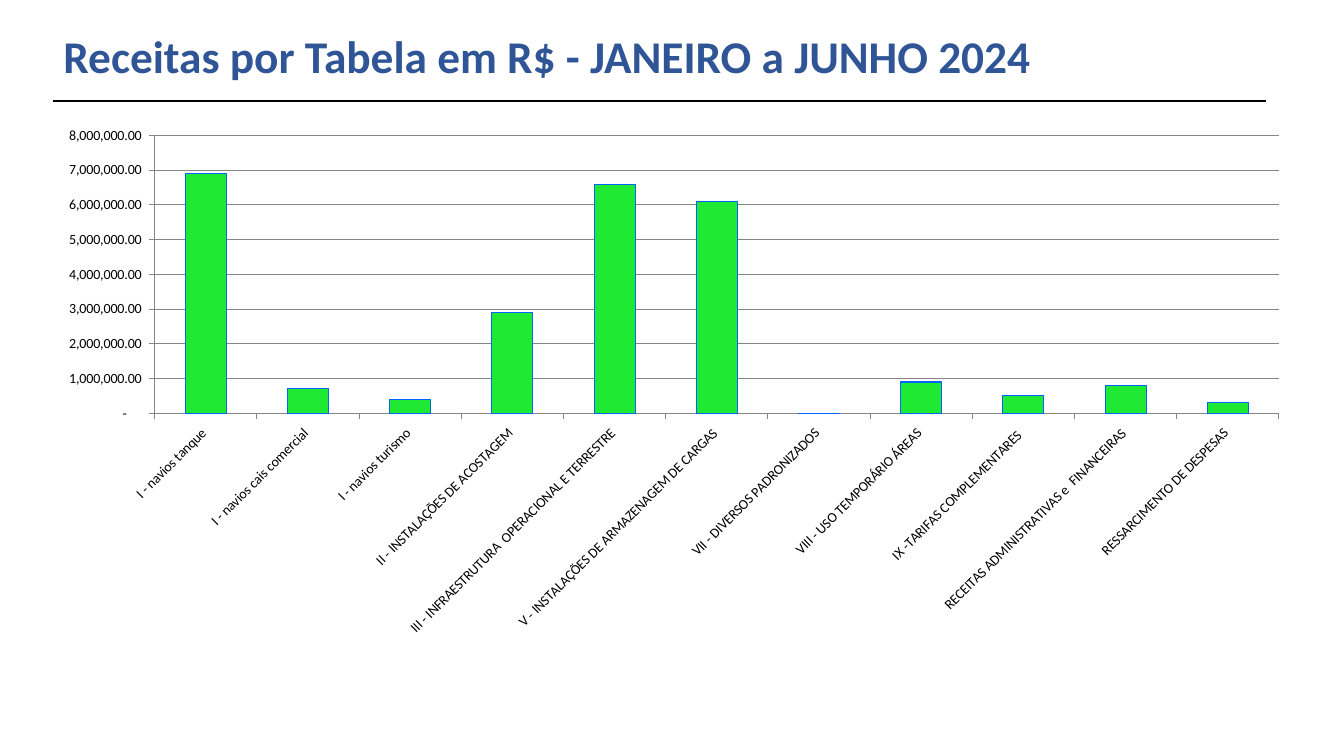
import pptx
import pptx.chart.data
import pptx.dml.color
import pptx.enum.chart
import pptx.enum.shapes
import pptx.enum.text
import pptx.oxml
import pptx.oxml.ns
import pptx.util
from pptx.util import Inches

COLORS = {
    "title": "2F5597",
    "text": "000000",
    "rule": "000000",
    "axis": "868686",
    "bar": "1FE932",
    "bar_edge": "0066FF",
}

REVENUES = {
    " I - navios tanque ": 6900000,
    " I - navios cais comercial ": 700000,
    " I - navios turismo ": 400000,
    " II - INSTALAÇÕES DE ACOSTAGEM ": 2900000,
    " III - INFRAESTRUTURA  OPERACIONAL E TERRESTRE ": 6600000,
    " V - INSTALAÇÕES DE ARMAZENAGEM DE CARGAS ": 6100000,
    " VII - DIVERSOS PADRONIZADOS ": 0,
    " VIII - USO TEMPORÁRIO ÁREAS ": 900000,
    " IX -TARIFAS COMPLEMENTARES  ": 500000,
    " RECEITAS ADMINISTRATIVAS e  FINANCEIRAS ": 800000,
    " RESSARCIMENTO DE DESPESAS ": 300000,
}
NUMBER_FORMAT = '_(* #,##0.00_);_(* \\(#,##0.00\\);_(* "-"??_);_(@_)'
PLOT_AREA = {"x": 0.0905, "y": 0.035, "w": 0.89, "h": 0.522}


class SlideBuilder:
    """Holds the style and the current slide."""

    font_name = "Calibri"

    def __init__(self, slide):
        self.slide = slide

    def color(self, name):
        return pptx.dml.color.RGBColor.from_string(COLORS[name])

    def style_line(self, line, color, width):
        line.color.rgb = self.color(color)
        line.width = pptx.util.Pt(width)

    def style_font(self, font, size, color, bold=False):
        font.name = self.font_name
        font.size = pptx.util.Pt(size)
        font.bold = bold
        font.color.rgb = self.color(color)

    def title(self, text, left, top, width, height):
        shape = self.slide.shapes.add_textbox(
            Inches(left), Inches(top), Inches(width), Inches(height))
        frame = shape.text_frame
        frame.word_wrap = True
        frame.vertical_anchor = pptx.enum.text.MSO_ANCHOR.TOP
        frame.text = text
        paragraph = frame.paragraphs[0]
        paragraph.line_spacing = 0.9
        self.style_font(paragraph.runs[0].font, 32.4, "title", bold=True)

    def rule(self, left, right, y):
        connector = self.slide.shapes.add_connector(
            pptx.enum.shapes.MSO_CONNECTOR.STRAIGHT,
            Inches(left), Inches(y), Inches(right), Inches(y))
        self.style_line(connector.line, "rule", 1.5)
        properties = connector._element.spPr
        properties.append(pptx.oxml.parse_xml(
            f"<a:effectLst {pptx.oxml.ns.nsdecls('a')}/>"))

    def column_chart(self, values, left, top, width, height):
        data = pptx.chart.data.CategoryChartData(number_format=NUMBER_FORMAT)
        data.categories = list(values)
        data.add_series("Series 1", list(values.values()))
        chart = self.slide.shapes.add_chart(
            pptx.enum.chart.XL_CHART_TYPE.COLUMN_CLUSTERED,
            Inches(left), Inches(top), Inches(width), Inches(height), data).chart
        chart.has_legend = False
        chart.has_title = False
        self.style_font(chart.font, 10, "text")

        plot = chart.plots[0]
        plot.gap_width = 150
        plot.vary_by_categories = False
        series = plot.series[0]
        series.format.fill.solid()
        series.format.fill.fore_color.rgb = self.color("bar")
        self.style_line(series.format.line, "bar_edge", 0.75)

        for axis in (chart.category_axis, chart.value_axis):
            axis.major_tick_mark = pptx.enum.chart.XL_TICK_MARK.OUTSIDE
            self.style_line(axis.format.line, "axis", 0.75)
            self.style_font(axis.tick_labels.font, 10, "text")
        self.slant_labels(chart.category_axis)

        value_axis = chart.value_axis
        value_axis.minimum_scale = 0
        value_axis.maximum_scale = 8000000
        value_axis.major_unit = 1000000
        value_axis.has_major_gridlines = True
        self.style_line(value_axis.major_gridlines.format.line, "axis", 0.75)
        value_axis.tick_labels.number_format = NUMBER_FORMAT
        value_axis.tick_labels.number_format_is_linked = False
        self.place_plot_area(chart)

    def slant_labels(self, axis):
        body = axis._element.find(".//" + pptx.oxml.ns.qn("a:bodyPr"))
        body.set("rot", str(-45 * 60000))
        body.set("vert", "horz")

    def place_plot_area(self, chart):
        """Fix the inner plot area as fractions of the chart."""
        modes = "".join(f'<c:{key}Mode val="edge"/>' for key in "xy")
        sizes = "".join(f'<c:{key} val="{value}"/>' for key, value in PLOT_AREA.items())
        layout = pptx.oxml.parse_xml(
            f"<c:layout {pptx.oxml.ns.nsdecls('c')}><c:manualLayout>"
            f'<c:layoutTarget val="inner"/>{modes}{sizes}'
            "</c:manualLayout></c:layout>")
        plot_area = chart._chartSpace.chart.plotArea
        for default_layout in plot_area.findall(pptx.oxml.ns.qn("c:layout")):
            plot_area.remove(default_layout)
        plot_area.insert(0, layout)


def main():
    presentation = pptx.Presentation()
    presentation.slide_width = Inches(13.33)
    presentation.slide_height = Inches(7.5)
    slide = presentation.slides.add_slide(presentation.slide_layouts[6])
    builder = SlideBuilder(slide)
    builder.rule(0.53, 12.56, 1)
    builder.title("Receitas por Tabela em R$ - JANEIRO a JUNHO 2024",
                  0.53, 0.29, 10.21, 0.7)
    builder.column_chart(REVENUES, 0.4, 1.16, 12.53, 5.28)
    presentation.save("out.pptx")


if __name__ == "__main__":
    main()
